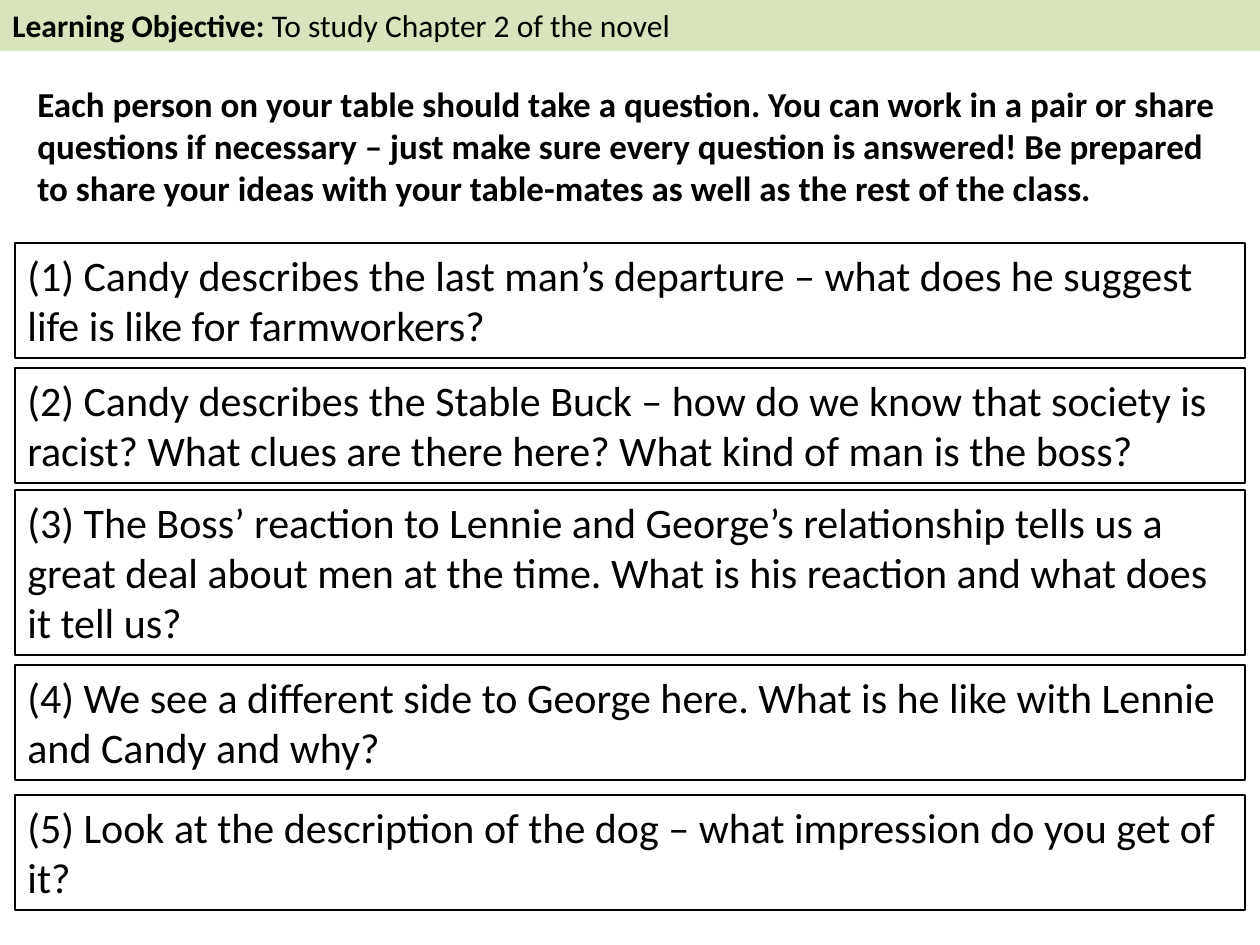
import pptx
import pptx.dml.color
import pptx.enum.shapes
import pptx.enum.text
import pptx.util

PX_PER_INCH = 126
COLOURS = {"ink": "000000", "objective": "D7E4BD"}
QUESTIONS = [
    (243, 115, "(1) Candy describes the last man’s departure – what does he suggest life is like for farmworkers?"),
    (368, 115, "(2) Candy describes the Stable Buck – how do we know that society is racist? "
               "What clues are there here? What kind of man is the boss?"),
    (490, 165, "(3) The Boss’ reaction to Lennie and George’s relationship tells us a great deal "
               "about men at the time. What is his reaction and what does it tell us?"),
    (665, 115, "(4) We see a different side to George here. What is he like with Lennie and Candy and why?"),
    (795, 115, "(5) Look at the description of the dog – what impression do you get of it?"),
]


def emu(px):
    return pptx.util.Emu(round(px * 914400 / PX_PER_INCH))


def rgb(name):
    return pptx.dml.color.RGBColor.from_string(COLOURS[name])


class QuestionSlide:
    """Holds the text style and the slide being built."""

    def __init__(self, slide, font="Calibri"):
        self.slide = slide
        self.font = font

    def set_text(self, shape, runs, size):
        frame = shape.text_frame
        frame.word_wrap = True
        frame.auto_size = pptx.enum.text.MSO_AUTO_SIZE.SHAPE_TO_FIT_TEXT
        frame.vertical_anchor = pptx.enum.text.MSO_ANCHOR.TOP
        paragraph = frame.paragraphs[0]
        paragraph.alignment = pptx.enum.text.PP_ALIGN.LEFT
        for text, bold in runs:
            run = paragraph.add_run()
            run.text = text
            run.font.name = self.font
            run.font.size = pptx.util.Pt(size)
            run.font.bold = bold
            run.font.color.rgb = rgb("ink")

    def box(self, bounds, runs, size, fill=None, line=None):
        shape = self.slide.shapes.add_shape(
            pptx.enum.shapes.MSO_SHAPE.RECTANGLE, *map(emu, bounds))
        shape.shadow.inherit = False
        if fill:
            shape.fill.solid()
            shape.fill.fore_color.rgb = rgb(fill)
        else:
            shape.fill.background()
        if line:
            shape.line.color.rgb = rgb(line)
            shape.line.width = pptx.util.Pt(0.75)
        else:
            shape.line.fill.background()
        self.set_text(shape, runs, size)

    def text(self, bounds, runs, size):
        self.set_text(self.slide.shapes.add_textbox(*map(emu, bounds)), runs, size)


def main():
    presentation = pptx.Presentation()
    presentation.slide_width = emu(1260)
    presentation.slide_height = emu(945)
    page = QuestionSlide(presentation.slides.add_slide(presentation.slide_layouts[6]))

    page.box((0, 0, 1260, 51),
             [("Learning Objective: ", True), ("To study Chapter 2 of the novel", False)],
             18, fill="objective")
    for top, height, question in QUESTIONS:
        page.box((15, top, 1230, height), [(question, False)], 24, line="ink")
    page.text((25, 76, 1211, 140),
              [("Each person on your table should take a question. You can work in a pair or share "
                "questions if necessary – just make sure every question is answered! Be prepared to "
                "share your ideas with your table-mates as well as the rest of the class.", True)], 20)

    presentation.save("out.pptx")


if __name__ == "__main__":
    main()
